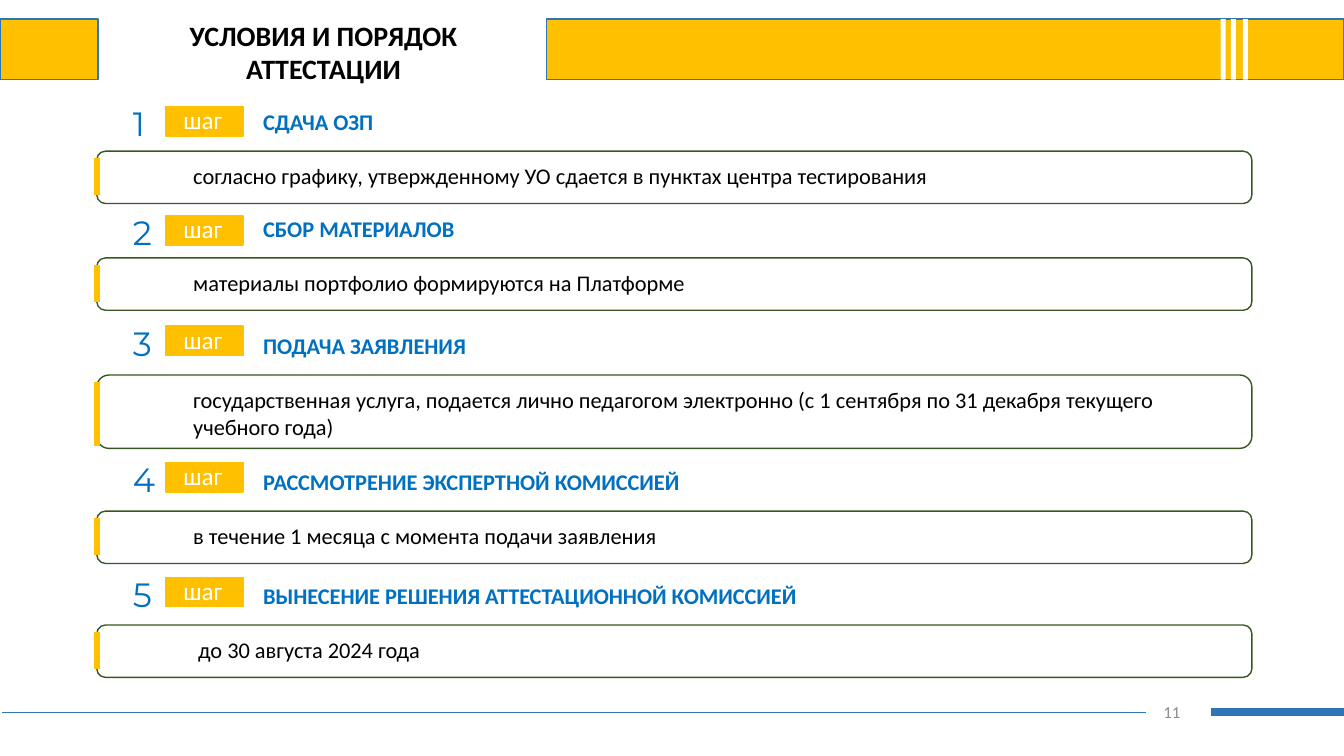
from dataclasses import dataclass
from lxml.etree import SubElement
from pptx import Presentation
from pptx.dml.color import RGBColor
from pptx.enum.shapes import MSO_CONNECTOR, MSO_SHAPE
from pptx.enum.text import MSO_ANCHOR, MSO_AUTO_SIZE, PP_ALIGN
from pptx.oxml.ns import qn
from pptx.util import Cm, Pt

TITLE = "УСЛОВИЯ И ПОРЯДОК АТТЕСТАЦИИ"
PAGE = "11"
BADGE = "шаг"
# heading, description, lines of description, top of badge, top of card (cm)
STEPS = [
    ("СДАЧА ОЗП",
     "согласно графику, утвержденному УО сдается в пунктах центра тестирования",
     1, 2.69, 3.81),
    ("СБОР МАТЕРИАЛОВ",
     "материалы портфолио формируются на Платформе",
     1, 5.44, 6.5),
    ("ПОДАЧА ЗАЯВЛЕНИЯ",
     "государственная услуга, подается лично педагогом электронно "
     "(с 1 сентября по 31 декабря текущего учебного года)",
     2, 8.22, 9.45),
    ("РАССМОТРЕНИЕ ЭКСПЕРТНОЙ КОМИССИЕЙ",
     "в течение 1 месяца с момента подачи заявления",
     1, 11.66, 12.88),
    ("ВЫНЕСЕНИЕ РЕШЕНИЯ АТТЕСТАЦИОННОЙ КОМИССИЕЙ",
     " до 30 августа 2024 года",
     1, 14.55, 15.75),
]


@dataclass(frozen=True)
class Theme:
    gold: str = "FFC000"
    blue: str = "2E75B6"
    accent: str = "0070C0"
    green: str = "385723"
    gray: str = "8C8C8C"
    black: str = "000000"
    white: str = "FFFFFF"
    font: str = "Calibri"
    digits: str = "Montserrat"
    title: int = 20
    number: int = 24
    badge: int = 18
    body: int = 16
    page: int = 12


T = Theme()
BAND_Y, BAND_H = 0.48, 1.53
STRIPES_X = (30.76, 31.02, 31.32)
CARD_X, CARD_W = 2.44, 29.11
FOOTER_Y = 17.94


def rgb(value):
    return RGBColor.from_string(value)


def add_box(s, x, y, w, h, fill=None, line=None, kind=MSO_SHAPE.RECTANGLE):
    sp = s.shapes.add_shape(kind, Cm(x), Cm(y), Cm(w), Cm(h))
    sp.shadow.inherit = False
    if fill:
        sp.fill.solid()
        sp.fill.fore_color.rgb = rgb(fill)
    else:
        sp.fill.background()
    if line:
        sp.line.color.rgb = rgb(line)
        sp.line.width = Pt(1)
    else:
        sp.line.fill.background()


def add_line(s, x1, y1, x2, y2, color, width):
    sp = s.shapes.add_connector(MSO_CONNECTOR.STRAIGHT, Cm(x1), Cm(y1), Cm(x2), Cm(y2))
    sp.line.color.rgb = rgb(color)
    sp.line.width = Pt(width)
    SubElement(sp._element.spPr, qn("a:effectLst"))


def add_text(s, x, y, w, h, text, size, color, font=T.font, bold=False,
             align=PP_ALIGN.LEFT, middle=False, wrap=True):
    """Text box; unless centred vertically, it grows with its text."""
    tf = s.shapes.add_textbox(Cm(x), Cm(y), Cm(w), Cm(h)).text_frame
    tf.word_wrap = wrap
    if middle:
        tf.vertical_anchor = MSO_ANCHOR.MIDDLE
    else:
        tf.auto_size = MSO_AUTO_SIZE.SHAPE_TO_FIT_TEXT
    p = tf.paragraphs[0]
    p.alignment = align
    r = p.add_run()
    r.text = text
    r.font.name = font
    r.font.size = Pt(size)
    r.font.bold = bold
    r.font.color.rgb = rgb(color)


def add_header(s):
    for x, w in ((0, 2.47), (13.78, 20.09)):
        add_box(s, x, BAND_Y, w, BAND_H, T.gold, T.blue)
    for x in STRIPES_X:
        add_box(s, x, BAND_Y, 0.13, BAND_H, T.white)
    add_text(s, 2.62, 0.71, 11.07, 1.19, TITLE, T.title, T.black,
             bold=True, align=PP_ALIGN.CENTER, middle=True)


def add_step(s, number, heading, description, lines, badge_y, card_y):
    text_h = 0.94 + 0.68 * (lines - 1)
    card_h = 1.32 + 0.53 * (lines - 1)
    add_text(s, 3.1, badge_y - 0.22, 1.09, 1.27, str(number), T.number, T.accent,
             font=T.digits, wrap=False)
    add_box(s, 4.17, badge_y, 1.96, 0.74, T.gold, T.gold)
    add_text(s, 4.37, badge_y - 0.18, 1.5, 1.02, BADGE, T.badge, T.white, wrap=False)
    add_text(s, 6.38, card_y - 1.2, 23.88, 0.94, heading, T.body, T.accent, bold=True)
    add_box(s, CARD_X, card_y, CARD_W, card_h, line=T.green,
            kind=MSO_SHAPE.ROUNDED_RECTANGLE)
    add_text(s, 4.62, card_y + 0.15, 26.5, text_h, description, T.body, T.black)
    bar_y = card_y + 0.17
    add_line(s, CARD_X, bar_y, CARD_X, bar_y + text_h, T.gold, 4.5)


def add_footer(s):
    add_line(s, 0.05, FOOTER_Y, 28.88, FOOTER_Y, T.blue, 0.5)
    add_line(s, 30.53, FOOTER_Y, 33.93, FOOTER_Y, T.blue, 6)
    add_text(s, 22.38, 17.42, 7.62, 1.02, PAGE, T.page, T.gray,
             align=PP_ALIGN.RIGHT, middle=True)


def main():
    prs = Presentation()
    prs.slide_width, prs.slide_height = Cm(33.87), Cm(19.05)
    s = prs.slides.add_slide(prs.slide_layouts[6])
    add_header(s)
    for number, step in enumerate(STEPS, 1):
        add_step(s, number, *step)
    add_footer(s)
    prs.save("out.pptx")


if __name__ == "__main__":
    main()
